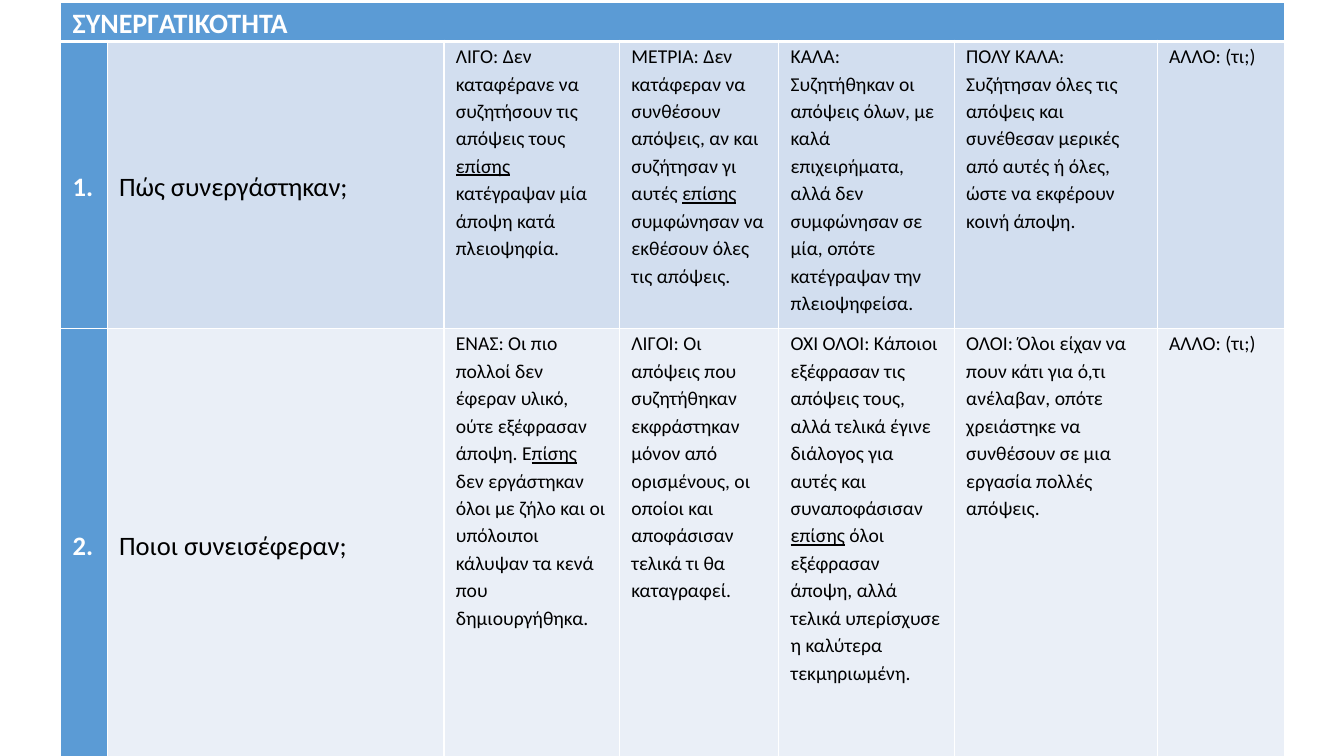
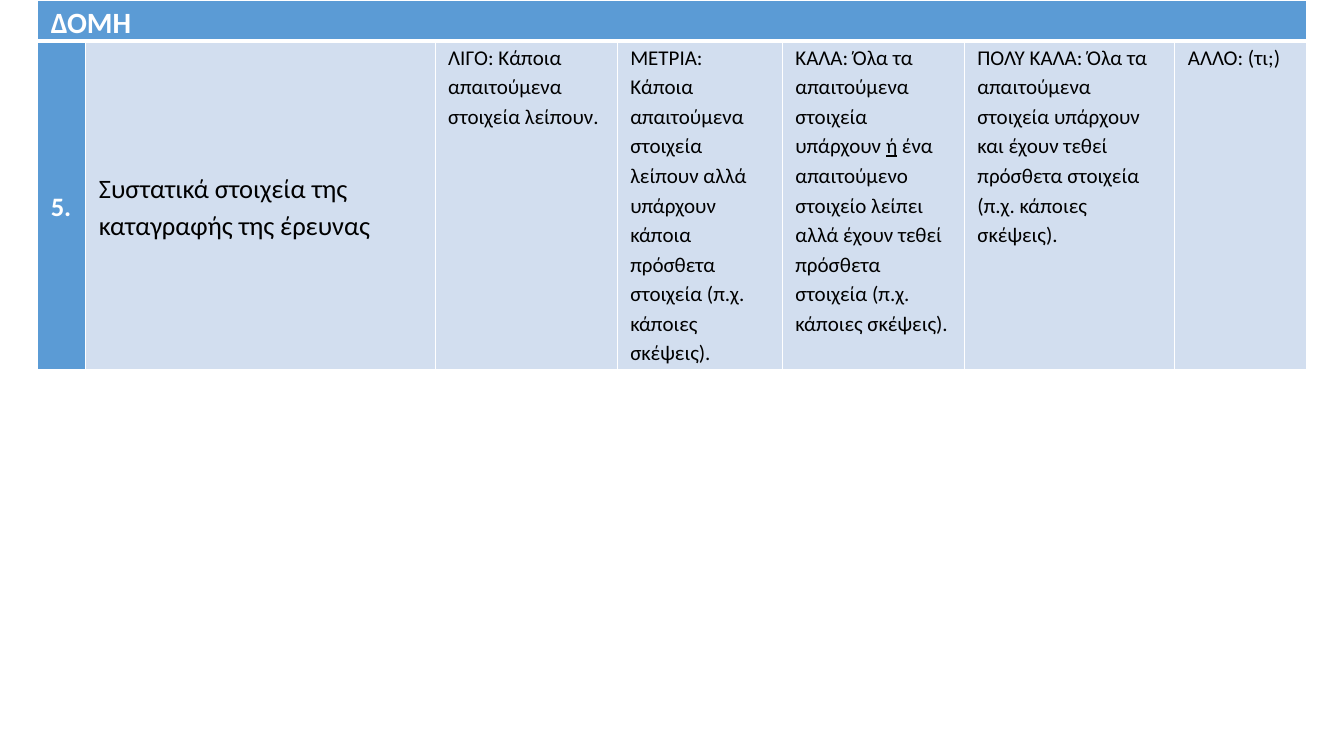
from lxml import etree
from pptx import Presentation
from pptx.dml.color import RGBColor
from pptx.enum.text import MSO_ANCHOR
from pptx.oxml.ns import qn
from pptx.util import Cm, Pt

MIDDLE, TOP = MSO_ANCHOR.MIDDLE, MSO_ANCHOR.TOP
BLANK_LAYOUT = 6
COLORS = {
    "accent": "5B9BD5",
    "band_dark": "D2DEEF",
    "band_light": "EAEFF7",
    "light": "FFFFFF",
    "dark": "000000",
}
BANDS = ("band_dark", "band_light")
COLUMN_SHARES = (1.17, 8.48, 4.42, 4.01, 4.42, 5.11, 3.2)
OTHER = "ΑΛΛΟ: (τι;)"


class RubricDeck:
    font = "Calibri"
    label_size = 19
    line_spacing = 1.15
    space_after = 10
    thin, thick = 1, 3

    def __init__(self):
        self.presentation = Presentation()
        self.presentation.slide_width = Cm(33.87)
        self.presentation.slide_height = Cm(19.05)
        self.slide = None

    def add_slide(self):
        layout = self.presentation.slide_layouts[BLANK_LAYOUT]
        self.slide = self.presentation.slides.add_slide(layout)

    def add_text(self, cell, text, size, color, bold=False):
        paragraph = cell.text_frame.paragraphs[0]
        paragraph.line_spacing = self.line_spacing
        paragraph.space_after = Pt(self.space_after)
        for position, part in enumerate(text.split("_")):
            if not part:
                continue
            run = paragraph.add_run()
            run.text = part
            run.font.name = self.font
            run.font.size = Pt(size)
            run.font.bold = bold
            run.font.underline = position % 2 == 1
            run.font.color.rgb = RGBColor.from_string(COLORS[color])

    def style_cell(self, cell, fill, inset, anchor, top, bottom):
        cell.margin_left = cell.margin_right = Cm(inset)
        cell.margin_top = cell.margin_bottom = Cm(0)
        cell.vertical_anchor = anchor
        properties = cell._tc.get_or_add_tcPr()
        edges = {"L": self.thin, "R": self.thin, "T": top, "B": bottom}
        for side, width in edges.items():
            line = etree.SubElement(properties, qn(f"a:ln{side}"), w=str(Pt(width)))
            solid = etree.SubElement(line, qn("a:solidFill"))
            etree.SubElement(solid, qn("a:srgbClr"), val=COLORS["light"])
        cell.fill.solid()
        cell.fill.fore_color.rgb = RGBColor.from_string(COLORS[fill])

    def add_rubric(self, title, criteria, left, top, width, heights, inset,
                   title_size, level_size):
        columns = len(COLUMN_SHARES)
        rubric = self.slide.shapes.add_table(
            len(heights), columns, Cm(left), Cm(top), Cm(width), Cm(sum(heights))
        ).table
        rubric.first_row = rubric.horz_banding = False
        for column, share in zip(rubric.columns, COLUMN_SHARES):
            column.width = Cm(width * share / sum(COLUMN_SHARES))
        for row, height in zip(rubric.rows, heights):
            row.height = Cm(height)

        for index in range(columns):
            self.style_cell(rubric.cell(0, index), "accent", inset, MIDDLE,
                            self.thin, self.thick)
        rubric.cell(0, 0).merge(rubric.cell(0, columns - 1))
        self.add_text(rubric.cell(0, 0), title, title_size, "light", bold=True)

        for row, criterion in enumerate(criteria, start=1):
            band = BANDS[(row - 1) % len(BANDS)]
            upper = self.thick if row == 1 else self.thin
            for index, text in enumerate(criterion):
                cell = rubric.cell(row, index)
                is_number, is_label = index == 0, index < 2
                self.style_cell(cell, "accent" if is_number else band, inset,
                                MIDDLE if is_label else TOP, upper, self.thin)
                self.add_text(cell, text,
                              self.label_size if is_label else level_size,
                              "light" if is_number else "dark", bold=is_number)


COOPERATION = [
    (
        "1.",
        "Πώς συνεργάστηκαν;",
        "ΛΙΓΟ: Δεν καταφέρανε να συζητήσουν τις απόψεις τους _επίσης _"
        "κατέγραψαν μία άποψη κατά πλειοψηφία.",
        "ΜΕΤΡΙΑ: Δεν κατάφεραν να συνθέσουν απόψεις, αν και συζήτησαν γι αυτές "
        "_επίσης_ συμφώνησαν να εκθέσουν όλες τις απόψεις.",
        "ΚΑΛΑ: Συζητήθηκαν οι απόψεις όλων, με καλά επιχειρήματα, αλλά δεν "
        "συμφώνησαν σε μία, οπότε κατέγραψαν την πλειοψηφείσα.",
        "ΠΟΛΥ ΚΑΛΑ: Συζήτησαν όλες τις απόψεις και συνέθεσαν μερικές από αυτές "
        "ή όλες, ώστε να εκφέρουν κοινή άποψη.",
        OTHER,
    ),
    (
        "2.",
        "Ποιοι συνεισέφεραν;",
        "ΕΝΑΣ: Οι πιο πολλοί δεν έφεραν υλικό, ούτε εξέφρασαν άποψη. Ε_πίσης_ "
        "δεν εργάστηκαν όλοι με ζήλο και οι υπόλοιποι κάλυψαν τα κενά που "
        "δημιουργήθηκα.",
        "ΛΙΓΟΙ: Οι απόψεις που συζητήθηκαν εκφράστηκαν μόνον από ορισμένους, "
        "οι οποίοι και αποφάσισαν τελικά τι θα καταγραφεί.",
        "ΟΧΙ ΟΛΟΙ: Κάποιοι εξέφρασαν τις απόψεις τους, αλλά τελικά έγινε "
        "διάλογος για αυτές και συναποφάσισαν _επίσης_ όλοι εξέφρασαν άποψη, "
        "αλλά τελικά υπερίσχυσε η καλύτερα τεκμηριωμένη.",
        "ΟΛΟΙ: Όλοι είχαν να πουν κάτι για ό,τι ανέλαβαν, οπότε χρειάστηκε να "
        "συνθέσουν σε μια εργασία πολλές απόψεις.",
        OTHER,
    ),
]

STRUCTURE = [
    (
        "5.",
        "Συστατικά στοιχεία της καταγραφής της έρευνας",
        "ΛΙΓΟ: Κάποια απαιτούμενα στοιχεία λείπουν.",
        "ΜΕΤΡΙΑ: Κάποια απαιτούμενα στοιχεία λείπουν αλλά υπάρχουν κάποια "
        "πρόσθετα στοιχεία (π.χ. κάποιες σκέψεις).",
        "ΚΑΛΑ: Όλα τα απαιτούμενα στοιχεία υπάρχουν _ή_ ένα απαιτούμενο "
        "στοιχείο λείπει αλλά έχουν τεθεί πρόσθετα στοιχεία (π.χ. κάποιες "
        "σκέψεις).",
        "ΠΟΛΥ ΚΑΛΑ: Όλα τα απαιτούμενα στοιχεία υπάρχουν και έχουν τεθεί "
        "πρόσθετα στοιχεία (π.χ. κάποιες σκέψεις).",
        OTHER,
    ),
]


def main():
    deck = RubricDeck()
    deck.add_slide()
    deck.add_rubric("ΣΥΝΕΡΓΑΤΙΚΟΤΗΤΑ", COOPERATION, left=1.53, top=0.05,
                    width=30.84, heights=(0.89, 7.24, 10.85), inset=0.3,
                    title_size=20, level_size=14)
    deck.add_slide()
    deck.add_rubric("ΔΟΜΗ", STRUCTURE, left=0.95, top=0, width=31.98,
                    heights=(0.99, 8.26), inset=0.33, title_size=21,
                    level_size=15)
    deck.presentation.save("out.pptx")


if __name__ == "__main__":
    main()
